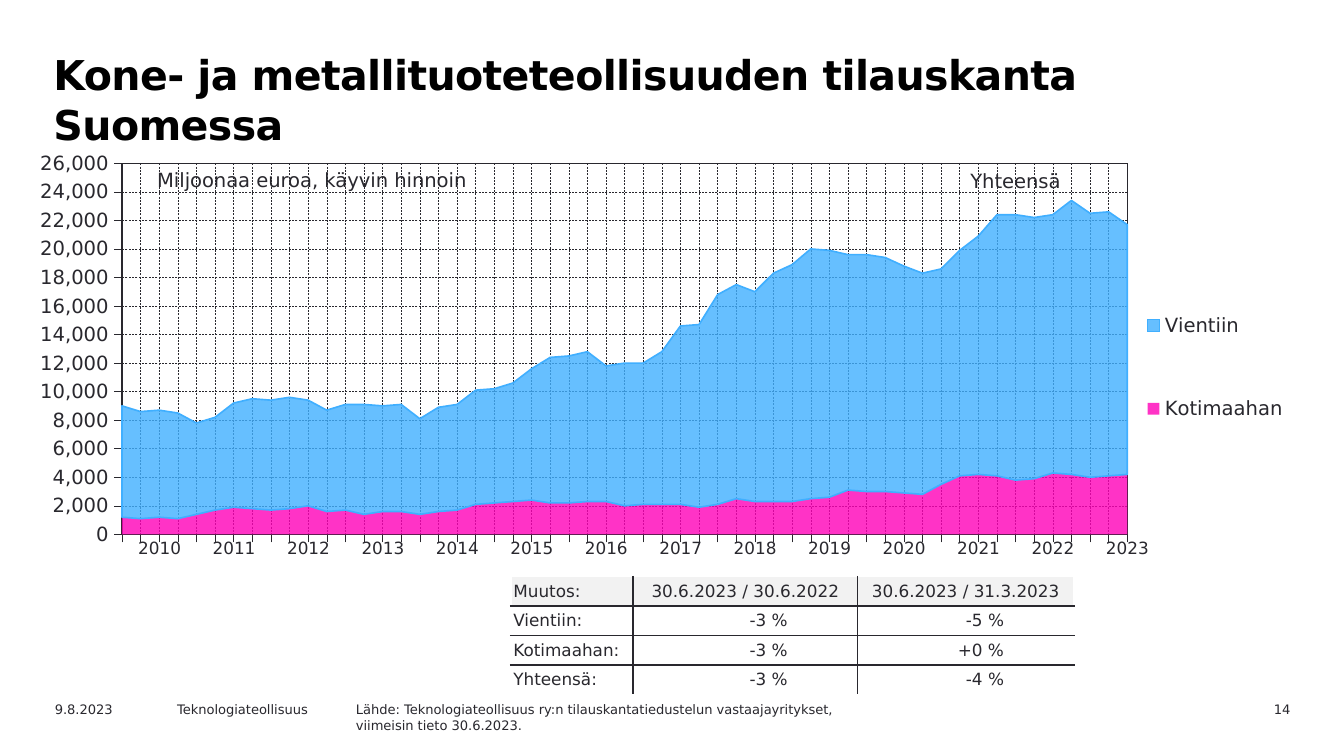
from lxml import etree
from pptx import Presentation
from pptx.chart.data import CategoryChartData
from pptx.dml.color import RGBColor
from pptx.enum.chart import XL_CHART_TYPE, XL_LEGEND_POSITION, XL_TICK_LABEL_POSITION, XL_TICK_MARK
from pptx.enum.dml import MSO_LINE
from pptx.enum.text import MSO_ANCHOR, PP_ALIGN
from pptx.oxml import parse_xml
from pptx.oxml.ns import nsdecls, qn
from pptx.util import Inches, Pt

# Content
FONT = "DejaVu Sans"
COLORS = {"title": "000000", "ink": "29282E", "white": "FFFFFF", "header": "F2F2F2",
          "domestic": "FF00B8", "export": "40AFFF"}
TITLE = "Kone- ja metallituoteteollisuuden tilauskanta Suomessa"
FOOTERS = [  # text, left, width, height, alignment
    ("14", 8.76, 0.94, 0.18, PP_ALIGN.RIGHT),
    ("9.8.2023", 0.31, 1, 0.18, PP_ALIGN.LEFT),
    ("Teknologiateollisuus", 1.22, 1.42, 0.18, PP_ALIGN.LEFT),
    ("Lähde: Teknologiateollisuus ry:n tilauskantatiedustelun vastaajayritykset,\n"
     "viimeisin tieto 30.6.2023.", 2.55, 5, 0.26, PP_ALIGN.LEFT),
]
CHART_LABELS = [  # text, left, top, width, side inset, top inset
    ("Miljoonaa euroa, käyvin hinnoin", 1.08, 1.2, 2.6, 0.09, 0.05),
    ("Yhteensä", 7.13, 1.22, 1.06, 0.09, 0.04)]
DOMESTIC = [1200, 1100, 1200, 1100, 1400, 1700, 1900, 1800, 1700, 1800, 2000, 1600, 1700, 1400,
            1600, 1600, 1400, 1600, 1700, 2100, 2200, 2300, 2400, 2200, 2200, 2300, 2300, 2000,
            2100, 2100, 2100, 1900, 2100, 2500, 2300, 2300, 2300, 2500, 2600, 3100, 3000, 3000,
            2900, 2800, 3500, 4100, 4200, 4100, 3800, 3900, 4300, 4200, 4000, 4100, 4200]
EXPORT = [7800, 7500, 7500, 7400, 6400, 6500, 7300, 7700, 7700, 7800, 7400, 7100, 7400, 7700,
          7400, 7500, 6700, 7300, 7400, 8000, 8000, 8300, 9200, 10200, 10300, 10500, 9500, 10000,
          9900, 10700, 12500, 12800, 14700, 15000, 14700, 16000, 16600, 17500, 17300, 16500,
          16600, 16400, 15900, 15500, 15100, 15800, 16700, 18300, 18600, 18300, 18100, 19200,
          18500, 18500, 17500]
SERIES = [("Kotimaahan ", DOMESTIC, "domestic"), ("Vientiin ", EXPORT, "export")]
CHANGES = [("Muutos:", "30.6.2023 / 30.6.2022", "30.6.2023 / 31.3.2023"),
           ("Vientiin:", "-3 %", "-5 %"),
           ("Kotimaahan:", "-3 %", "+0 %"),
           ("Yhteensä:", "-3 %", "-4 %")]
YEARS = [str(year) for year in range(2010, 2024)]


def color(name):
    return RGBColor.from_string(COLORS[name])


def style_font(font, size, name="ink", bold=False):
    font.name, font.size, font.bold = FONT, Pt(size), bold
    font.color.rgb = color(name)


def write(frame, text, size, name="ink", bold=False, align=PP_ALIGN.LEFT):
    frame.text = text
    for paragraph in frame.paragraphs:
        paragraph.alignment = align
        for run in paragraph.runs:
            style_font(run.font, size, name, bold)


def add_text(text, left, top, width, height, wrap=True, **style):
    frame = slide.shapes.add_textbox(*map(Inches, (left, top, width, height))).text_frame
    frame.word_wrap = wrap
    write(frame, text, **style)
    return frame


def add_plain_table(rows, left, top, widths, row_height):
    box = map(Inches, (left, top, sum(widths), row_height * len(rows)))
    table = slide.shapes.add_table(len(rows), len(widths), *box).table
    table.first_row = table.horz_banding = False
    style_id = table._tbl.tblPr.find(qn("a:tableStyleId"))
    style_id.text = "{2D5ABB26-0587-4C30-8999-92F81FD0307C}"
    for column, width in zip(table.columns, widths):
        column.width = Inches(width)
    for row in table.rows:
        row.height = Inches(row_height)
    return table


def set_borders(cell, sides):
    for side, name in sides.items():
        cell._tc.get_or_add_tcPr().append(parse_xml(
            f'<a:ln{side} {nsdecls("a")} w="12700"><a:solidFill>'
            f'<a:srgbClr val="{COLORS[name]}"/></a:solidFill></a:ln{side}>'))


def manual_layout(x, y, w, h, inner=False):
    parts = [("layoutTarget", "inner")] if inner else []
    parts += [("xMode", "edge"), ("yMode", "edge"), ("x", x), ("y", y), ("w", w), ("h", h)]
    body = "".join(f'<c:{tag} val="{value}"/>' for tag, value in parts)
    return parse_xml(f'<c:layout {nsdecls("c")}><c:manualLayout>{body}</c:manualLayout></c:layout>')


def style_line(line, name, width, dash=None):
    line.color.rgb = color(name)
    line.width = Pt(width)
    if dash:
        line.dash_style = dash


# Widescreen 16:9 slide
presentation = Presentation()
presentation.slide_width = Inches(10)
presentation.slide_height = presentation.slide_width * 9 // 16
slide = presentation.slides.add_slide(presentation.slide_layouts[6])

# Title
heading = add_text(TITLE, 0.28, 0.31, 8.74, 0.71, size=22, name="title", bold=True).paragraphs[0]
heading.line_spacing = Pt(27)
heading._p.get_or_add_pPr().set("marL", str(Inches(0.02)))
heading.runs[0].font._element.set("spc", "-30")

# Footer
for text, left, width, height, align in FOOTERS:
    add_text(text, left, 5.17, width, height, size=7, align=align)

# Order book chart
data = CategoryChartData(number_format="#,##0")
data.categories = [str(quarter) for quarter in range(1, len(DOMESTIC) + 1)]
for name, values, _ in SERIES:
    data.add_series(name, values)
chart = slide.shapes.add_chart(XL_CHART_TYPE.AREA_STACKED, Inches(0.2), Inches(1.11),
                               Inches(9.69), Inches(3.12), data).chart
chart.has_title = False
style_font(chart.font, 10.5)
for series, (_, _, name) in zip(chart.plots[0].series, SERIES):
    series.format.fill.solid()
    series.format.fill.fore_color.rgb = color(name)
    fill = series.format.fill._xPr.find(qn("a:solidFill"))
    etree.SubElement(fill[0], qn("a:alpha")).set("val", "80000")
style_line(chart.plots[0].series[1].format.line, "export", 0.88)

quarters, amounts = chart.category_axis, chart.value_axis
for axis in (quarters, amounts):
    axis.has_major_gridlines = True
    axis.major_tick_mark, axis.minor_tick_mark = XL_TICK_MARK.OUTSIDE, XL_TICK_MARK.NONE
    style_line(axis.format.line, "ink", 0.22)
    style_line(axis.major_gridlines.format.line, "ink", 0.25, MSO_LINE.DASH)
quarters.tick_label_position = XL_TICK_LABEL_POSITION.NONE
amounts.minimum_scale, amounts.maximum_scale, amounts.major_unit = 0, 26000, 2000
amounts.tick_labels.number_format = "#,##0"
amounts.tick_labels.number_format_is_linked = False
style_font(amounts.tick_labels.font, 10.5)
amounts._element.find(qn("c:crossBetween")).set("val", "midCat")

chart.has_legend = True
legend = chart.legend
legend.position, legend.include_in_layout = XL_LEGEND_POSITION.RIGHT, False
style_font(legend.font, 10.5)

# Chart layout and plot frame
plot_area = chart._chartSpace.chart.plotArea
for holder, layout in ((plot_area, manual_layout(0.073, 0.034, 0.772, 0.885, inner=True)),
                       (legend._element, manual_layout(0.84, 0.25, 0.15, 0.54))):
    for old in holder.findall(qn("c:layout")):
        holder.remove(old)
    if holder is plot_area:
        holder.insert(0, layout)
    else:
        holder.find(qn("c:legendPos")).addnext(layout)
plot_area.append(parse_xml(
    f'<c:spPr {nsdecls("c", "a")}><a:noFill/><a:ln w="9525"><a:solidFill>'
    f'<a:srgbClr val="{COLORS["ink"]}"/></a:solidFill></a:ln></c:spPr>'))

# Labels over the chart
for text, left, top, width, side_inset, top_inset in CHART_LABELS:
    frame = add_text(text, left, top, width, 0.27, size=10.5)
    frame.margin_left = frame.margin_right = Inches(side_inset)
    frame.margin_top = frame.margin_bottom = Inches(top_inset)

# Change table: dark inner rules, white outer edges
changes = add_plain_table(CHANGES, 3.8, 4.29, (0.91, 1.67, 1.61), 0.22)
last_row, last_column = len(CHANGES) - 1, len(CHANGES[0]) - 1
for r, row in enumerate(CHANGES):
    for c, text in enumerate(row):
        cell = changes.cell(r, c)
        is_value = r > 0 and c > 0
        align = PP_ALIGN.LEFT if c == 0 else PP_ALIGN.RIGHT if is_value else PP_ALIGN.CENTER
        write(cell.text_frame, text, 9, align=align)
        cell.vertical_anchor = MSO_ANCHOR.MIDDLE
        cell.margin_left = cell.margin_top = cell.margin_bottom = Inches(0.02)
        cell.margin_right = Inches(0.52 if is_value else 0.02)
        outer = {"L": c == 0, "R": c == last_column, "T": r == 0, "B": r == last_row}
        set_borders(cell, {side: "white" if edge else "ink" for side, edge in outer.items()})
        cell.fill.solid()
        cell.fill.fore_color.rgb = color("header" if r == 0 else "white")

# Year labels under the chart
year_row = add_plain_table([YEARS], 0.91, 3.96, [7.76 / len(YEARS)] * len(YEARS), 0.31)
for cell, year in zip(year_row.rows[0].cells, YEARS):
    write(cell.text_frame, year, 9, align=PP_ALIGN.CENTER)
    cell.fill.background()

presentation.save("out.pptx")
